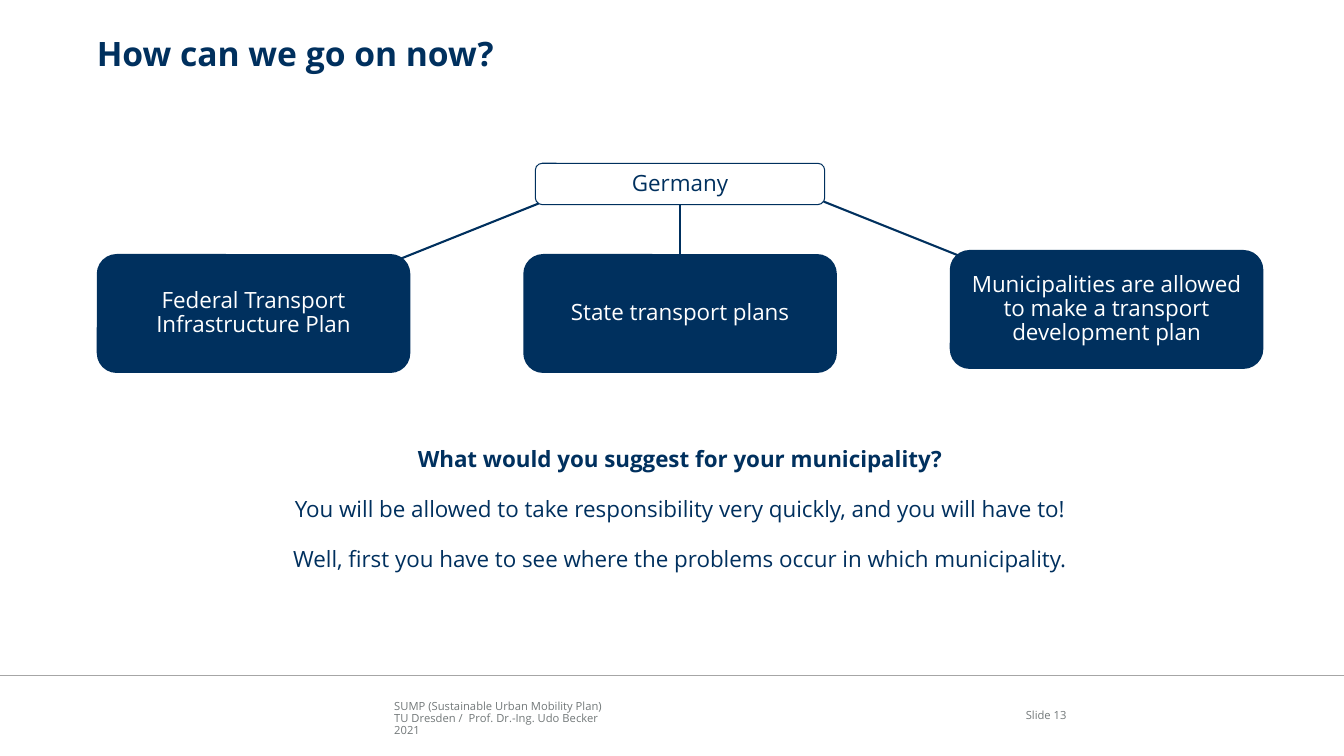
from dataclasses import dataclass

import pptx
import pptx.dml.color
import pptx.enum.shapes
import pptx.enum.text
import pptx.oxml
import pptx.util
from pptx.util import Inches

ALIGN = pptx.enum.text.PP_ALIGN
ANCHOR = pptx.enum.text.MSO_ANCHOR


@dataclass(frozen=True)
class Theme:
    navy: str = "00305E"
    white: str = "FFFFFF"
    grey: str = "727879"
    rule: str = "A6A6A6"
    font: str = "Open Sans"
    title_size: int = 24
    body_size: int = 16
    footer_size: int = 8
    line_spacing: float = 0.88
    paragraph_gap: int = 19


@dataclass(frozen=True)
class Box:
    text: str
    left: float
    top: float
    width: float = 3.11
    height: float = 1.18
    fill: str = "00305E"
    ink: str = "FFFFFF"


@dataclass(frozen=True)
class Line:
    start: tuple[float, float]
    end: tuple[float, float]
    color: str
    weight: float


THEME = Theme()
MARGIN, CONTENT_WIDTH = 0.96, 11.57
PLAN_STEP = 4.23

COUNTRY = Box("Germany", 5.31, 1.62, 2.87, 0.41, THEME.white, THEME.navy)
PLANS = [
    Box(text, MARGIN + column * PLAN_STEP, top)
    for column, (text, top) in enumerate([
        ("Federal Transport Infrastructure Plan", 2.52),
        ("State transport plans", 2.52),
        ("Municipalities are allowed to make a transport development plan", 2.48),
    ])
]
LINES = [
    Line((0, 6.7), (13.33, 6.7), THEME.rule, 1),
    Line((5.34, 2.02), (3.89, 2.6), THEME.navy, 1.5),
    Line((8.17, 2), (9.62, 2.58), THEME.navy, 1.5),
]
STATE_LINE = Line((6.75, 2.03), (6.75, 2.52), THEME.navy, 1.5)
QUESTION = [
    "What would you suggest for your municipality?",
    "You will be allowed to take responsibility very quickly, and you will have to!",
    "Well, first you have to see where the problems occur in which municipality.",
]
FOOTER = [
    "SUMP (Sustainable Urban Mobility Plan)",
    "TU Dresden /  Prof. Dr.-Ing. Udo Becker",
    "2021",
]


def rgb(color: str) -> pptx.dml.color.RGBColor:
    return pptx.dml.color.RGBColor.from_string(color)


def write(frame, lines: list[str], size: int, color: str, align=ALIGN.LEFT,
          anchor=ANCHOR.TOP, margin: float | None = None, gap: int = 0,
          bold_first: bool = False) -> None:
    """Fill a text frame with one paragraph per line."""
    frame.word_wrap = True
    frame.auto_size = pptx.enum.text.MSO_AUTO_SIZE.NONE
    frame.vertical_anchor = anchor
    if margin is not None:
        frame.margin_left = frame.margin_right = Inches(margin)
        frame.margin_top = frame.margin_bottom = Inches(margin)
    for index, line in enumerate(lines):
        paragraph = frame.add_paragraph() if index else frame.paragraphs[0]
        paragraph.text = line
        paragraph.alignment = align
        paragraph.line_spacing = THEME.line_spacing
        paragraph.space_before = pptx.util.Pt(gap if index else 0)
        paragraph.font.name = THEME.font
        paragraph.font.size = pptx.util.Pt(size)
        paragraph.font.bold = bold_first and index == 0
        paragraph.font.color.rgb = rgb(color)


def add_text(slide, left: float, top: float, width: float, height: float,
             lines: list[str], size: int, color: str, **style) -> None:
    area = slide.shapes.add_textbox(Inches(left), Inches(top), Inches(width), Inches(height))
    write(area.text_frame, lines, size, color, **style)


def add_box(slide, box: Box):
    shape = slide.shapes.add_shape(
        pptx.enum.shapes.MSO_SHAPE.ROUNDED_RECTANGLE,
        Inches(box.left), Inches(box.top), Inches(box.width), Inches(box.height))
    shape.shadow.inherit = False
    shape.fill.solid()
    shape.fill.fore_color.rgb = rgb(box.fill)
    if box.fill == THEME.white:
        shape.line.color.rgb = rgb(THEME.navy)
        shape.line.width = pptx.util.Pt(0.75)
    else:
        shape.line.fill.background()
    write(shape.text_frame, [box.text], THEME.body_size, box.ink,
          align=ALIGN.CENTER, anchor=ANCHOR.MIDDLE)
    return shape


def add_line(slide, line: Line):
    connector = slide.shapes.add_connector(
        pptx.enum.shapes.MSO_CONNECTOR.STRAIGHT,
        *(Inches(value) for value in line.start + line.end))
    connector.line.color.rgb = rgb(line.color)
    connector.line.width = pptx.util.Pt(line.weight)
    properties = connector._element.spPr
    properties.append(pptx.oxml.parse_xml(
        '<a:effectLst xmlns:a="http://schemas.openxmlformats.org/drawingml/2006/main"/>'))
    return connector


def main() -> None:
    deck = pptx.Presentation()
    deck.slide_width, deck.slide_height = Inches(13.33), Inches(7.5)
    slide = deck.slides.add_slide(deck.slide_layouts[5])

    title = slide.shapes.title
    title.left, title.top = Inches(MARGIN), Inches(0.38)
    title.width, title.height = Inches(CONTENT_WIDTH), Inches(0.75)
    write(title.text_frame, ["How can we go on now?"], THEME.title_size, THEME.navy,
          margin=0, bold_first=True)

    country = add_box(slide, COUNTRY)
    plans = [add_box(slide, plan) for plan in PLANS]
    for line in LINES:
        add_line(slide, line)
    state_link = add_line(slide, STATE_LINE)
    state_link.begin_connect(country, 2)
    state_link.end_connect(plans[1], 0)

    add_text(slide, MARGIN, 4.4, CONTENT_WIDTH, 1.99, QUESTION, THEME.body_size, THEME.navy,
             align=ALIGN.CENTER, gap=THEME.paragraph_gap, bold_first=True)
    add_text(slide, 3.91, 6.91, 5.67, 0.4, FOOTER, THEME.footer_size, THEME.grey,
             anchor=ANCHOR.BOTTOM, margin=0)
    add_text(slide, 9.81, 6.9, 0.77, 0.4, ["Slide 13"], THEME.footer_size, THEME.grey,
             align=ALIGN.RIGHT, anchor=ANCHOR.MIDDLE, margin=0)
    deck.save("out.pptx")


if __name__ == "__main__":
    main()
